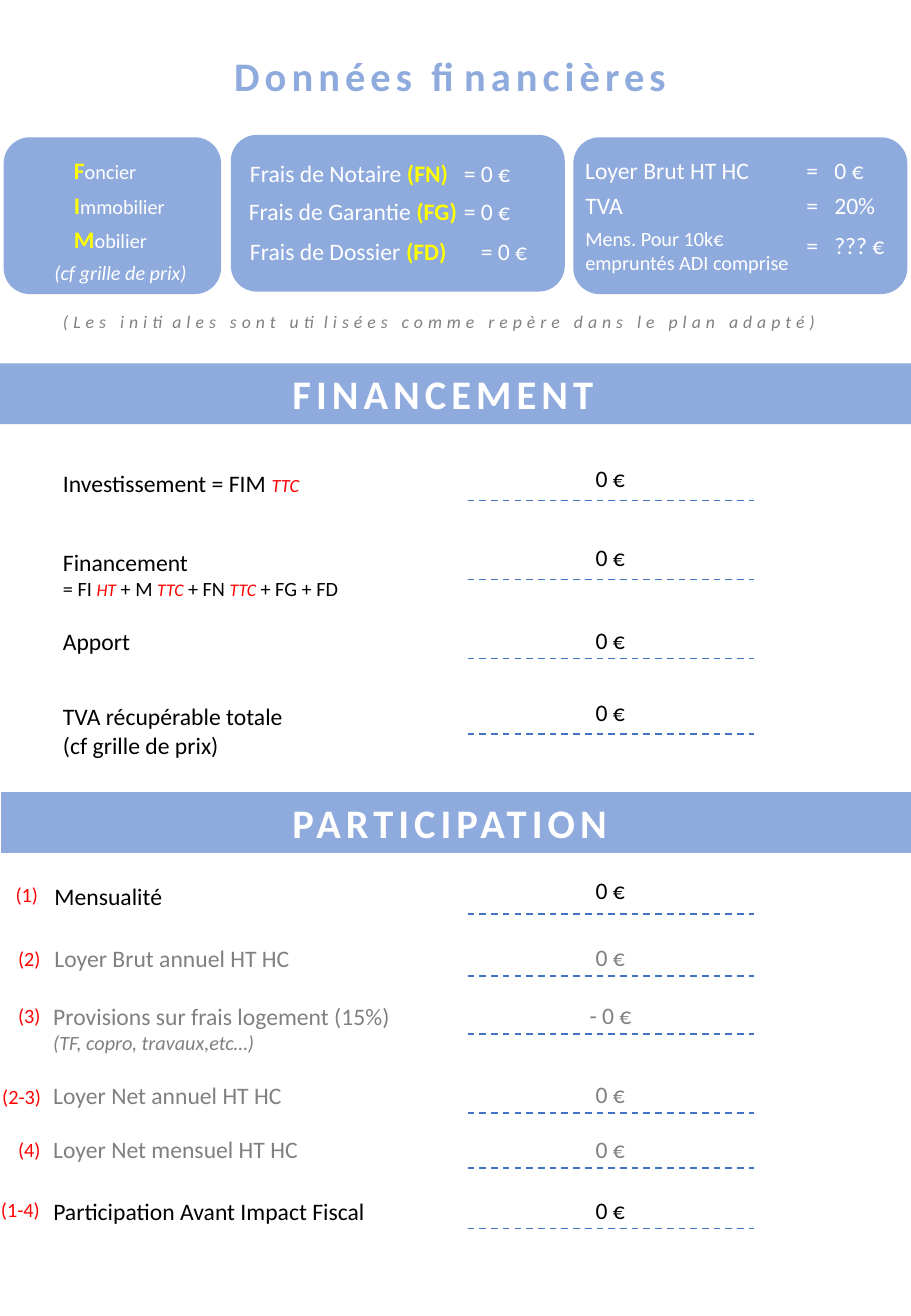
"""Build the one-page financial data sheet: key figures, financing and participation."""
from lxml import etree
from pptx import Presentation
from pptx.dml.color import RGBColor
from pptx.enum.dml import MSO_LINE
from pptx.enum.shapes import MSO_CONNECTOR, MSO_SHAPE as SHAPE
from pptx.enum.text import MSO_AUTO_SIZE as AUTO
from pptx.oxml.ns import qn
from pptx.util import Inches, Pt

THEME = {
    "font": "Calibri",
    "blue": "8FAADC", "rule": "4472C4", "white": "FFFFFF", "black": "000000",
    "grey": "808080", "red": "FF0000", "yellow": "FFFF00",
    "title": 24, "body": 14, "small": 12, "tag": 11, "note": 10.5,
}
INITIAL = {"color": "yellow", "bold": True}
SMALL = {"size": "small"}
TTC = {"size": "note", "color": "red", "italic": True}

CARDS = [(0.03, 1.13, 1.79), (4.72, 1.13, 2.75), (1.9, 1.11, 2.75)]
CARD_HEIGHT = 1.29
BANNERS = [("FINANCEMENT", 0, 2.99, 2.74), ("PARTICIPATION", 0.01, 6.52, 2.86)]

INITIALS = [("F", "oncier", 1.23, 0.72), ("I", "mmobilier", 1.52, 0.96), ("M", "obilier", 1.8, 0.81)]
FEES = [
    ("Frais de Notaire ", "(FN)", 1.96, 1.26, 1.84, 3.72),
    ("Frais de Garantie ", "(FG)", 1.95, 1.57, 1.93, 3.72),
    ("Frais de Dossier ", "(FD)", 1.96, 1.9, 1.83, 3.86),
]
RENT = [("Loyer Brut HT HC", "0 €", 1.23, 1.56), ("TVA", "20%", 1.52, 0.52)]

FINANCING = [
    ([[("Investissement = FIM ", {}), ("TTC", {**TTC, "size": "tag"})]], 3.81, 2.24, 3.77, 4.12),
    ([[("Financement", {})],
      [("= FI ", SMALL), ("HT", TTC), (" + M ", SMALL), ("TTC", TTC), (" + FN ", SMALL),
       ("TTC", TTC), (" + FG + FD", SMALL)]], 4.46, 2.5, 4.42, 4.77),
    ([[("Apport", {})]], 5.11, 0.76, 5.1, 5.42),
    ([[("TVA récupérable totale", {})], [("(cf grille de prix)", {})]], 5.73, 2.08, 5.69, 6.04),
]
PARTICIPATION = [
    ("(1)", 0.03, 7.21, [[("Mensualité", {})]], 0.35, 7.21, 1.1, "0 €", 7.16, 7.52, "black"),
    ("(2)", 0.05, 7.74, [[("Loyer Brut annuel HT HC", {})]],
     0.35, 7.72, 2.16, "0 €", 7.71, 8.03, "grey"),
    ("(3)", 0.05, 8.21, [[("Provisions sur frais logement (15%)", {})],
                         [("(TF, copro, travaux,etc…)", {"size": "small", "italic": True})]],
     0.34, 8.2, 3.0, "- 0 €", 8.19, 8.51, "grey"),
    ("(2-3)", -0.08, 8.87, [[("Loyer Net annuel HT HC", {})]],
     0.34, 8.85, 2.1, "0 €", 8.84, 9.16, "grey"),
    ("(4)", 0.05, 9.31, [[("Loyer Net mensuel HT HC", {})]],
     0.34, 9.29, 2.23, "0 €", 9.29, 9.61, "grey"),
    ("(1-4)", -0.09, 9.8, [[("Participation Avant Impact Fiscal", {})]],
     0.34, 9.8, 2.79, "0 €", 9.79, 10.11, "black"),
]
RULE_LEFT, RULE_RIGHT = 3.85, 6.21


def rgb(name):
    """Return the theme colour of that name."""
    return RGBColor.from_string(THEME[name])


def add_text(slide, text, left, top, width, height=0.34, wrap=False, tab=None, **base):
    """Add a text box from a string or from paragraphs of (text, format) runs."""
    tb = slide.shapes.add_textbox(Inches(left), Inches(top), Inches(width), Inches(height))
    tf = tb.text_frame
    tf.word_wrap = wrap
    tf.auto_size = AUTO.SHAPE_TO_FIT_TEXT
    paragraphs = [[(text, {})]] if isinstance(text, str) else text
    for i, runs in enumerate(paragraphs):
        p = tf.add_paragraph() if i else tf.paragraphs[0]
        if tab:
            stops = etree.SubElement(p._p.get_or_add_pPr(), qn("a:tabLst"))
            etree.SubElement(stops, qn("a:tab"), pos=str(Inches(tab)), algn="l")
        for words, own in runs:
            fmt = {"size": "body", "color": "black", **base, **own}
            r = p.add_run()
            r.text = words
            r.font.name = THEME["font"]
            r.font.size = Pt(THEME[fmt["size"]])
            r.font.color.rgb = rgb(fmt["color"])
            r.font.bold = fmt.get("bold", False)
            r.font.italic = fmt.get("italic", False)
            if "spacing" in fmt:
                r._r.get_or_add_rPr().set("spc", str(fmt["spacing"] * 100))


def add_panel(slide, kind, left, top, width, height):
    """Add a plain blue panel."""
    sp = slide.shapes.add_shape(kind, Inches(left), Inches(top), Inches(width), Inches(height))
    sp.shadow.inherit = False
    sp.fill.solid()
    sp.fill.fore_color.rgb = rgb("blue")
    sp.line.fill.background()


def add_amount(slide, amount, top, rule_y, color="black"):
    """Add an amount centred over its dashed rule."""
    width = 0.45 if amount == "0 €" else 0.55
    left = (RULE_LEFT + RULE_RIGHT - width) / 2
    add_text(slide, amount, left, top, width, color=color)
    cx = slide.shapes.add_connector(MSO_CONNECTOR.STRAIGHT, Inches(RULE_LEFT), Inches(rule_y),
                                    Inches(RULE_RIGHT), Inches(rule_y))
    cx.line.color.rgb = rgb("rule")
    cx.line.width = Pt(1)
    cx.line.dash_style = MSO_LINE.DASH
    etree.SubElement(cx._element.spPr, qn("a:effectLst"))


def add_key_figures(slide):
    """Add the title, the three cards and the note below them."""
    add_text(slide, "Données financières", 1.83, 0.37, 3.84, 0.5,
             size="title", color="blue", bold=True, spacing=3)
    for left, top, width in CARDS:
        add_panel(slide, SHAPE.ROUNDED_RECTANGLE, left, top, width, CARD_HEIGHT)
    for letter, rest, top, width in INITIALS:
        add_text(slide, [[(letter, INITIAL), (rest, SMALL)]], 0.51, top, width, color="white")
    add_text(slide, "(cf grille de prix)", 0.35, 2.09, 1.31, 0.3,
             size="small", color="white", italic=True)
    for label, code, left, top, width, amount_left in FEES:
        add_text(slide, [[(label, {}), (code, INITIAL)]], left, top, width, color="white")
        add_text(slide, "= 0 €", amount_left, top, 0.59, color="white")
    for label, _, top, width in RENT:
        add_text(slide, label, 4.72, top, width, color="white")
    add_text(slide, "Mens. Pour 10k€ empruntés ADI comprise", 4.72, 1.81, 1.95, 0.5,
             wrap=True, size="small", color="white")
    for value, top in [(row[1], row[2]) for row in RENT] + [("??? €", 1.85)]:
        add_text(slide, f"=\t{value}", 6.54, top, 0.92, wrap=True, tab=0.23, color="white")
    add_text(slide, "(Les initiales sont utilisées comme repère dans le plan adapté)",
             0.42, 2.51, 6.56, 0.28, size="note", color="grey", italic=True, spacing=3)


def main():
    """Assemble and save the sheet."""
    prs = Presentation()
    prs.slide_width, prs.slide_height = Inches(7.5), Inches(10.83)
    slide = prs.slides.add_slide(prs.slide_layouts[6])
    add_key_figures(slide)
    for heading, left, top, width in BANNERS:
        add_panel(slide, SHAPE.RECTANGLE, left, top, 7.5, 0.5)
        add_text(slide, heading, 2.31, top, width, 0.5,
                 size="title", color="white", bold=True, spacing=3)
    for label, top, width, amount_top, rule_y in FINANCING:
        add_text(slide, label, 0.42, top, width, 0.34 if len(label) == 1 else 0.55)
        add_amount(slide, "0 €", amount_top, rule_y)
    for (mark, mark_left, mark_top, label, left, top, width,
         amount, amount_top, rule_y, color) in PARTICIPATION:
        add_text(slide, mark, mark_left, mark_top, 0.39 if len(mark) == 3 else 0.53, 0.3,
                 size="small", color="red")
        add_text(slide, label, left, top, width, 0.34 if len(label) == 1 else 0.54, color=color)
        add_amount(slide, amount, amount_top, rule_y, color)
    prs.save("out.pptx")


if __name__ == "__main__":
    main()
